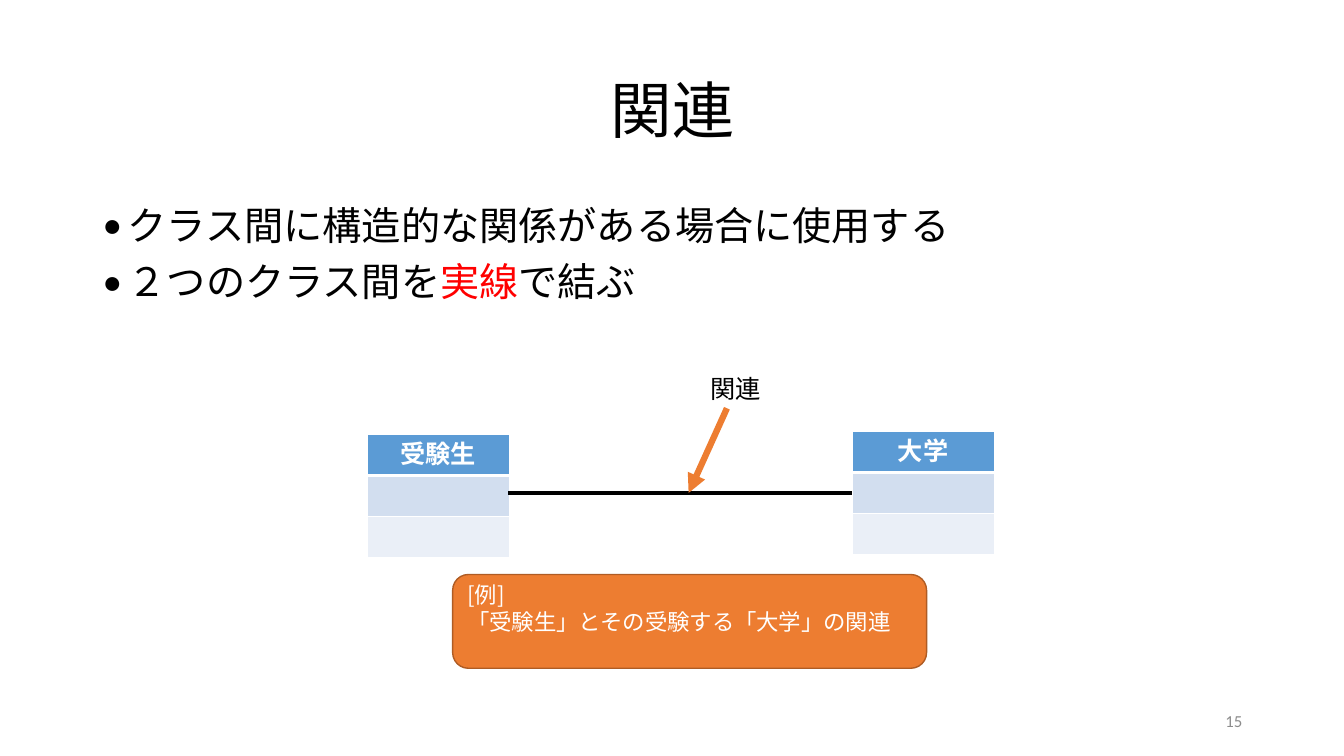
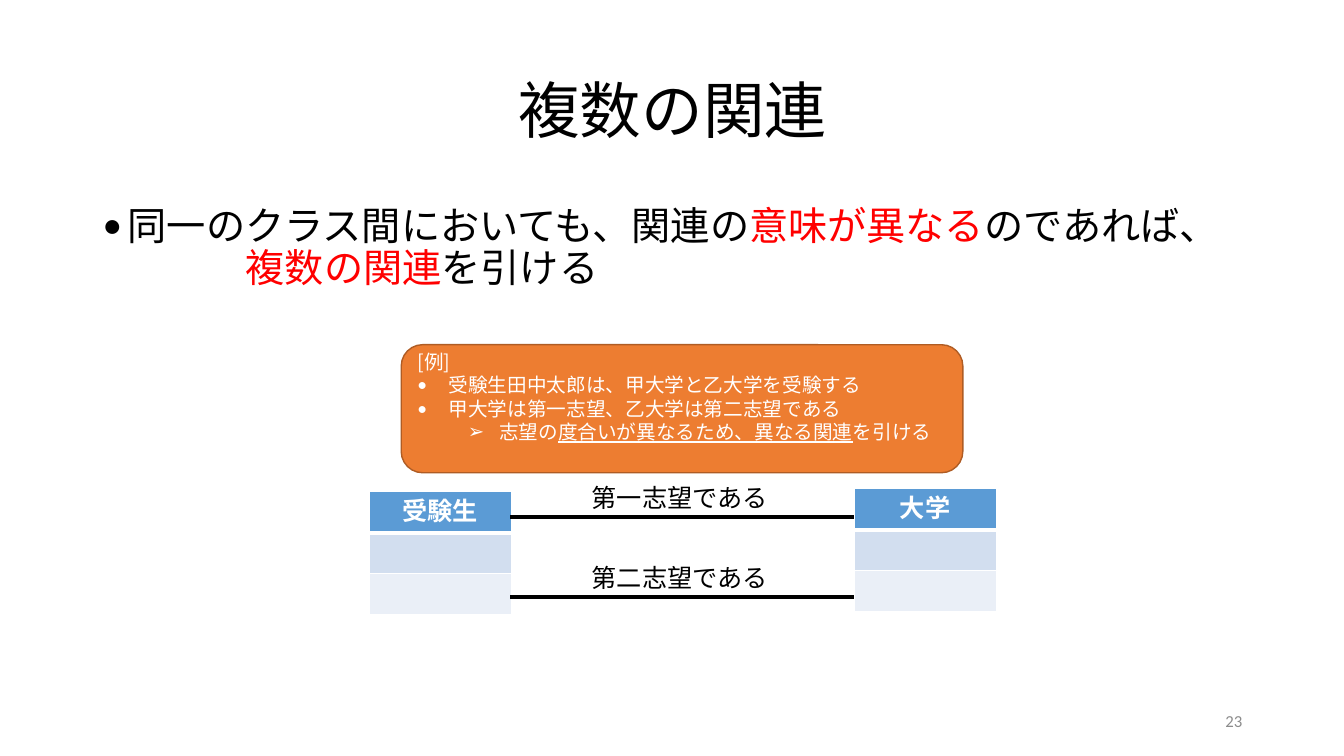
import pptx
import pptx.dml.color
import pptx.enum.shapes
import pptx.enum.text
import pptx.oxml
import pptx.oxml.ns
import pptx.util
from lxml import etree

Inches = pptx.util.Inches
Pt = pptx.util.Pt
ALIGN = pptx.enum.text.PP_ALIGN
ANCHOR = pptx.enum.text.MSO_ANCHOR
SHAPE = pptx.enum.shapes.MSO_SHAPE
qn = pptx.oxml.ns.qn

COLORS = {
    "text": "000000", "white": "FFFFFF", "accent": "FF0000", "number": "8C8C8C",
    "header": "5B9BD5", "band1": "D2DEEF", "band2": "EAEFF7",
    "orange": "ED7D31", "orange_edge": "AF5C24",
}
BODY = {"line_spacing": 0.9, "space_before": Pt(10)}
RED = {"color": "accent"}


class Deck:
    """Slide style, the current slide, and one method per kind of element."""

    font = "Calibri"
    callout_font = "Noto Sans CJK JP"
    line_height = 1.22

    def __init__(self):
        self.prs = pptx.Presentation()
        self.prs.slide_width = Inches(13.33)
        self.prs.slide_height = Inches(7.5)
        self.s = None

    def color(self, name):
        return pptx.dml.color.RGBColor.from_string(COLORS[name])

    def new_slide(self, title, number, body):
        self.s = self.prs.slides.add_slide(self.prs.slide_layouts[6])
        self.text((0.92, 0.4, 11.5, 1.45), [{"runs": [(title, {})]}], size=44,
                  anchor=ANCHOR.MIDDLE,
                  fmt={"alignment": ALIGN.CENTER, "line_spacing": 0.9})
        self.text((0.92, 2, 11.5, 4.76), body, size=28, fmt=BODY)
        self.text((9.42, 6.95, 3, 0.4), [{"runs": [(number, {})]}], size=12,
                  color="number", anchor=ANCHOR.MIDDLE, fmt={"alignment": ALIGN.RIGHT})

    def run(self, p, text, size, color="text", font=None, **fmt):
        r = p.add_run()
        r.text = text
        r.font.color.rgb = self.color(color)
        values = {"size": Pt(size), "name": font or self.font, **fmt}
        for key, value in values.items():
            setattr(r.font, key, value)
        ea = etree.SubElement(r.font._element, qn("a:ea"))
        ea.set("typeface", self.font)

    def indent(self, p, left, hanging, bullet):
        pPr = p._p.get_or_add_pPr()
        pPr.set("marL", str(Inches(left)))
        pPr.set("indent", str(-Inches(hanging)))
        if bullet:
            etree.SubElement(pPr, qn("a:buFont")).set("typeface", self.font)
            etree.SubElement(pPr, qn("a:buChar")).set("char", bullet)

    def fill_text(self, tf, paragraphs, fmt=None, **style):
        for i, item in enumerate(paragraphs):
            p = tf.paragraphs[0] if i == 0 else tf.add_paragraph()
            if "indent" in item:
                self.indent(p, *item["indent"])
            values = {"alignment": ALIGN.LEFT, **(fmt or {}), **item.get("fmt", {})}
            if i == 0:
                values["space_before"] = Pt(0)
            for key, value in values.items():
                setattr(p, key, value)
            for text, changes in item["runs"]:
                self.run(p, text, **{**style, **changes})

    def text(self, box, paragraphs, size=18, color="text", anchor=ANCHOR.TOP, fmt=None):
        sp = self.s.shapes.add_textbox(*map(Inches, box))
        tf = sp.text_frame
        tf.word_wrap = True
        tf.vertical_anchor = anchor
        self.fill_text(tf, paragraphs, fmt, size=size, color=color)

    def label(self, x, y, text):
        self.text((x, y, 2.46, 0.4), [{"runs": [(text, {})]}])

    def callout(self, box, paragraphs, size):
        sp = self.s.shapes.add_shape(SHAPE.ROUNDED_RECTANGLE, *map(Inches, box))
        sp.shadow.inherit = False
        sp.fill.solid()
        sp.fill.fore_color.rgb = self.color("orange")
        sp.line.color.rgb = self.color("orange_edge")
        sp.line.width = Pt(1)
        tf = sp.text_frame
        values = {"word_wrap": True, "vertical_anchor": ANCHOR.MIDDLE,
                  "margin_bottom": Inches(0.05) + Pt(size * self.line_height)}
        for key, value in values.items():
            setattr(tf, key, value)
        self.fill_text(tf, paragraphs, size=size, color="white", font=self.callout_font)

    def line(self, start, end, color="text", width=3, arrow=False):
        c = self.s.shapes.add_connector(pptx.enum.shapes.MSO_CONNECTOR.STRAIGHT,
                                        *map(Inches, (*start, *end)))
        c.line.color.rgb = self.color(color)
        c.line.width = Pt(width)
        if arrow:
            etree.SubElement(c.line._get_or_add_ln(), qn("a:tailEnd")).set("type", "triangle")
        etree.SubElement(c._element.spPr, qn("a:effectLst"))

    def border(self, cell, bottom):
        tcPr = cell._tc.get_or_add_tcPr()
        for i, (side, width) in enumerate(zip("LRTB", (1, 1, 1, bottom))):
            ln = etree.Element(qn("a:ln" + side), w=str(Pt(width)))
            fill = etree.SubElement(ln, qn("a:solidFill"))
            etree.SubElement(fill, qn("a:srgbClr")).set("val", COLORS["white"])
            tcPr.insert(i, ln)

    def class_box(self, x, y, name):
        fills = ("header", "band1", "band2")
        frame = self.s.shapes.add_table(len(fills), 1, *map(Inches, (x, y, 1.41, 1.22)))
        table = frame.table
        for i, fill in enumerate(fills):
            cell = table.cell(i, 0)
            cell.fill.solid()
            cell.fill.fore_color.rgb = self.color(fill)
            self.border(cell, 3 if i == 0 else 1)
        self.fill_text(table.cell(0, 0).text_frame, [{"runs": [(name, {})]}],
                       {"alignment": ALIGN.CENTER}, size=18, color="white", bold=True)

    def class_pair(self, x, y):
        self.class_box(x, y, "受験生")
        self.class_box(x + 4.81, y - 0.03, "大学")


def bullet(*runs, left=0.25, hanging=0.25, char="•", **fmt):
    return {"indent": (left, hanging, char), "runs": runs, "fmt": fmt}


def main():
    deck = Deck()

    deck.new_slide("関連", "15", [
        bullet(("クラス間に構造的な関係がある場合に使用する", {})),
        bullet(("２つのクラス間を", {}), ("実線", RED), ("で結ぶ", {})),
    ])
    deck.class_pair(3.64, 4.31)
    deck.line((5.04, 4.89), (8.45, 4.89))
    deck.line((7.21, 4.05), (6.83, 4.89), color="orange", width=4.5, arrow=True)
    deck.label(6.95, 3.65, "関連")
    deck.callout((4.49, 5.7, 4.7, 0.93), [
        {"runs": [("[例]", {})]},
        {"runs": [("「受験生」とその受験する「大学」の関連", {})]},
    ], size=16)

    deck.new_slide("複数の関連", "23", [
        bullet(("同一のクラス間においても、関連の", {}), ("意味が異なる", RED),
               ("のであれば、", {})),
        bullet(("複数の関連", RED), ("を引ける", {}), left=1.42, hanging=0, char=None,
               space_before=Pt(0)),
    ])
    deck.class_pair(3.66, 4.88)
    for y, text in ((5.13, "第一志望である"), (5.92, "第二志望である")):
        deck.line((5.06, y), (8.47, y))
        deck.label(5.77, y - 0.39, text)
    deck.callout((3.98, 3.42, 5.57, 1.27), [
        {"runs": [("[例]", {})]},
        bullet(("受験生田中太郎は、甲大学と乙大学を受験する", {}), left=0.31, hanging=0.31),
        bullet(("甲大学は第一志望、乙大学は第二志望である", {}), left=0.31, hanging=0.31),
        bullet(("志望の", {}), ("度合いが異なるため、異なる関連", {"underline": True}),
               ("を引ける", {}), left=0.81, hanging=0.31, char="➢", level=1),
    ], size=14)

    deck.prs.save("out.pptx")


if __name__ == "__main__":
    main()
